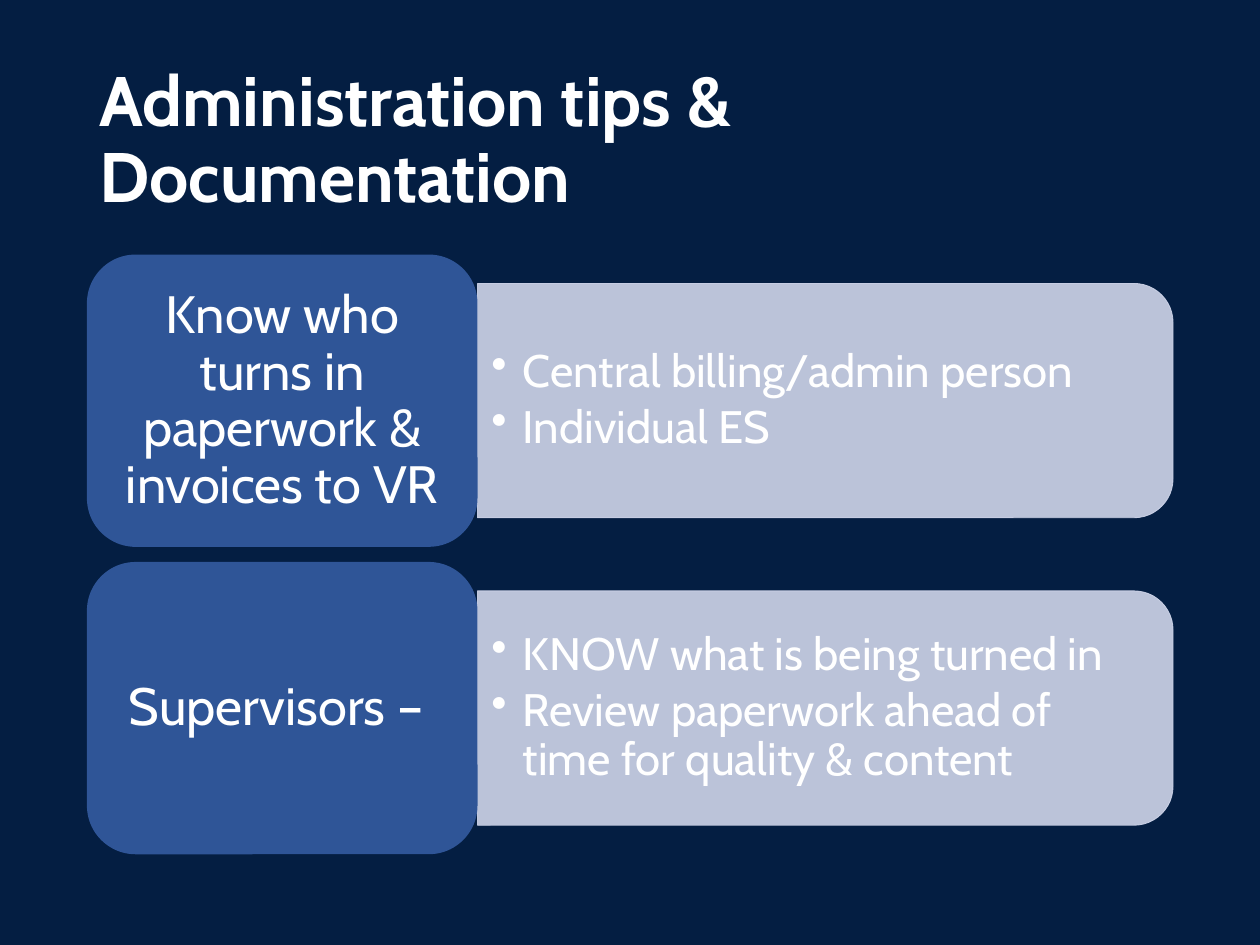
"""Build the administration tips and documentation slide."""
import pptx
import pptx.dml.color
import pptx.enum.shapes
import pptx.enum.text
import pptx.oxml.ns
import pptx.util
from lxml import etree

Inches = pptx.util.Inches
Pt = pptx.util.Pt
RGBColor = pptx.dml.color.RGBColor
Shape = pptx.enum.shapes.MSO_SHAPE
Align = pptx.enum.text.PP_ALIGN
qn = pptx.oxml.ns.qn

NAVY = RGBColor(0x04, 0x1E, 0x42)
BLUE = RGBColor(0x2F, 0x55, 0x97)
PALE = RGBColor(0xCF, 0xD5, 0xEA)
WHITE = RGBColor(0xFF, 0xFF, 0xFF)

ROWS = [
    ("Know who turns in paperwork & invoices to VR",
     ["Central billing/admin person", "Individual ES"]),
    ("Supervisors – ",
     ["KNOW what is being turned in",
      "Review paperwork ahead of time for quality & content"]),
]
FIRST_TOP = 2.02
ROW_STEP = 2.44


class TipSlide:
    font = "Cabin"

    def __init__(self, deck):
        self.slide = deck.slides.add_slide(deck.slide_layouts[5])
        self.slide.background.fill.solid()
        self.slide.background.fill.fore_color.rgb = NAVY

    def add_text(self, para, text, size, align=Align.LEFT, bold=False):
        para.alignment = align
        para.line_spacing = 0.9
        span = para.add_run()
        span.text = text
        span.font.name = self.font
        span.font.size = Pt(size)
        span.font.bold = bold
        span.font.color.rgb = WHITE

    def title(self, text, left, top, width, height):
        box = self.slide.shapes.title
        box.left, box.top = Inches(left), Inches(top)
        box.width, box.height = Inches(width), Inches(height)
        frame = box.text_frame
        frame.auto_size = pptx.enum.text.MSO_AUTO_SIZE.NONE
        frame.vertical_anchor = pptx.enum.text.MSO_ANCHOR.MIDDLE
        self.add_text(frame.paragraphs[0], text, 40, bold=True)

    def shape(self, kind, left, top, width, height, color):
        shape = self.slide.shapes.add_shape(
            kind, Inches(left), Inches(top), Inches(width), Inches(height))
        shape.shadow.inherit = False
        shape.fill.solid()
        shape.fill.fore_color.rgb = color
        shape.line.fill.background()
        return shape

    def panel(self, left, top, width, height):
        shape = self.shape(Shape.ROUND_2_SAME_RECTANGLE,
                           left + (width - height) / 2,
                           top + (height - width) / 2, height, width, PALE)
        shape.rotation = 90
        shape.line.color.rgb = PALE
        shape.line.width = Pt(0.5)
        for color in shape._element.spPr.iter(qn("a:srgbClr")):
            etree.SubElement(color, qn("a:alpha"), val="90000")

    def text_frame(self, left, top, width, height, inset):
        box = self.slide.shapes.add_textbox(
            Inches(left), Inches(top), Inches(width), Inches(height))
        frame = box.text_frame
        frame.word_wrap = True
        frame.vertical_anchor = pptx.enum.text.MSO_ANCHOR.MIDDLE
        frame.margin_left = frame.margin_right = Inches(inset)
        frame.margin_top = frame.margin_bottom = Inches(inset / 2)
        return frame

    def label(self, text, left, top, width, height):
        frame = self.text_frame(left, top, width, height, 0.12)
        self.add_text(frame.paragraphs[0], text, 30, Align.CENTER)

    def bullets(self, items, left, top, width, height):
        frame = self.text_frame(left, top, width, height, 0.11)
        for index, item in enumerate(items):
            para = frame.add_paragraph() if index else frame.paragraphs[0]
            para.level = 1
            para.space_after = Pt(4)
            props = para._p.get_or_add_pPr()
            props.set("marL", str(Inches(0.25)))
            props.set("indent", str(-Inches(0.25)))
            etree.SubElement(props, qn("a:buChar"), char="•")
            self.add_text(para, item, 26)


def main():
    deck = pptx.Presentation()
    deck.slide_width, deck.slide_height = Inches(10), Inches(7.5)
    page = TipSlide(deck)
    page.title("Administration tips & Documentation", 0.69, 0.4, 8.62, 1.45)
    for index, (label, items) in enumerate(ROWS):
        top = FIRST_TOP + index * ROW_STEP
        page.panel(3.79, top + 0.23, 5.52, 1.86)
        page.bullets(items, 3.79, top + 0.32, 5.43, 1.68)
        page.shape(Shape.ROUNDED_RECTANGLE, 0.69, top, 3.1, 2.32, BLUE)
        page.label(label, 0.8, top + 0.12, 2.88, 2.09)
    deck.save("out.pptx")


if __name__ == "__main__":
    main()
